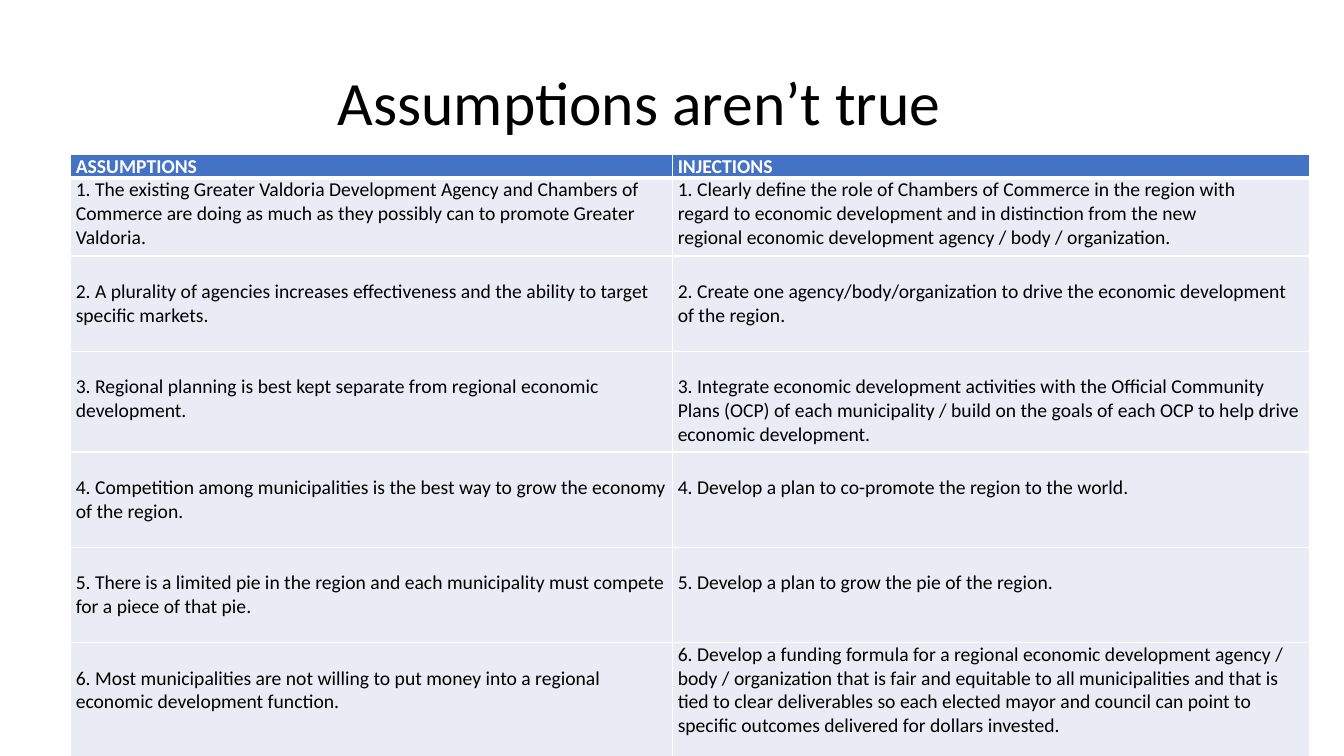
from lxml import etree
from pptx import Presentation
from pptx.dml.color import RGBColor
from pptx.enum.text import MSO_ANCHOR, MSO_AUTO_SIZE, PP_ALIGN
from pptx.oxml.ns import qn
from pptx.util import Cm, Pt

MIDDLE, TOP = MSO_ANCHOR.MIDDLE, MSO_ANCHOR.TOP
NO_FIT = MSO_AUTO_SIZE.NONE
LEFT = PP_ALIGN.LEFT

COLORS = {"text": "000000", "white": "FFFFFF", "header": "4472C4", "body": "E9EBF5"}
FONT = "Calibri"
LINE = 0.6  # height of one text line in cm

ROWS = [
    ("ASSUMPTIONS", "INJECTIONS"),
    ("1. The existing Greater Valdoria Development Agency and Chambers of Commerce are doing "
     "as much as they possibly can to promote Greater Valdoria.",
     "1. Clearly define the role of Chambers of Commerce in the region with regard to economic "
     "development and in distinction from the new regional economic development agency / body / "
     "organization."),
    ("2. A plurality of agencies increases effectiveness and the ability to target specific markets.",
     "2. Create one agency/body/organization to drive the economic development of the region."),
    ("3. Regional planning is best kept separate from regional economic development.",
     "3. Integrate economic development activities with the Official Community Plans (OCP) of each "
     "municipality / build on the goals of each OCP to help drive economic development."),
    ("4. Competition among municipalities is the best way to grow the economy of the region.",
     "4. Develop a plan to co-promote the region to the world."),
    ("5. There is a limited pie in the region and each municipality must compete for a piece of "
     "that pie.",
     "5. Develop a plan to grow the pie of the region."),
    ("6. Most municipalities are not willing to put money into a regional economic development "
     "function.",
     "6. Develop a funding formula for a regional economic development agency / body / organization "
     "that is fair and equitable to all municipalities and that is tied to clear deliverables so "
     "each elected mayor and council can point to specific outcomes delivered for dollars invested."),
]
COL_WIDTHS = [15.17, 16.06]
ROW_HEIGHTS = [LINE, 1.96, 2.4, 2.54, 2.4, 2.4, 3]
FLUSH_CELLS = {(0, 0), (0, 1), (1, 0), (1, 1), (6, 1)}  # text starts at the cell's top


def format_run(r, size, color, bold=False):
    r.font.name = FONT
    r.font.size = Pt(size)
    r.font.bold = bold
    r.font.color.rgb = RGBColor.from_string(COLORS[color])


def add_border(cell, side, width):
    ln = etree.SubElement(cell._tc.get_or_add_tcPr(), qn("a:" + side), w=str(Pt(width)))
    fill = etree.SubElement(ln, qn("a:solidFill"))
    etree.SubElement(fill, qn("a:srgbClr"), val=COLORS["white"])


prs = Presentation()
prs.slide_width, prs.slide_height = Cm(33.87), Cm(19.05)
s = prs.slides.add_slide(prs.slide_layouts[5])

# Title
title = s.shapes.title
title.left, title.top, title.width, title.height = Cm(8.26), Cm(0.81), Cm(18.24), Cm(3.68)
tf = title.text_frame
tf.text = "Assumptions aren’t true"
tf.auto_size = NO_FIT
tf.vertical_anchor = MIDDLE
p = tf.paragraphs[0]
p.alignment = LEFT
p.line_spacing = 0.9
format_run(p.runs[0], 44, "text")

# Table of assumptions and injections
table = s.shapes.add_table(len(ROWS), len(COL_WIDTHS), Cm(1.78), Cm(3.89),
                           Cm(sum(COL_WIDTHS)), Cm(sum(ROW_HEIGHTS))).table
for column, width in zip(table.columns, COL_WIDTHS):
    column.width = Cm(width)

for i, texts in enumerate(ROWS):
    table.rows[i].height = Cm(ROW_HEIGHTS[i])
    header = i == 0
    for j, text in enumerate(texts):
        cell = table.cell(i, j)
        cell.text = text
        cell.vertical_anchor = TOP
        cell.margin_left = cell.margin_right = Cm(0.13)
        cell.margin_top = Cm(0 if (i, j) in FLUSH_CELLS else LINE)
        cell.margin_bottom = 0
        format_run(cell.text_frame.paragraphs[0].runs[0], 14,
                   "white" if header else "text", header)
        for side in ("lnL", "lnR", "lnT", "lnB"):
            thick = (i, side) in {(0, "lnB"), (1, "lnT")}
            add_border(cell, side, 3 if thick else 1)
        cell.fill.solid()
        cell.fill.fore_color.rgb = RGBColor.from_string(COLORS["header" if header else "body"])

# Narrower text in the first injection
table.cell(1, 1).margin_right = Cm(1.5)

prs.save("out.pptx")
